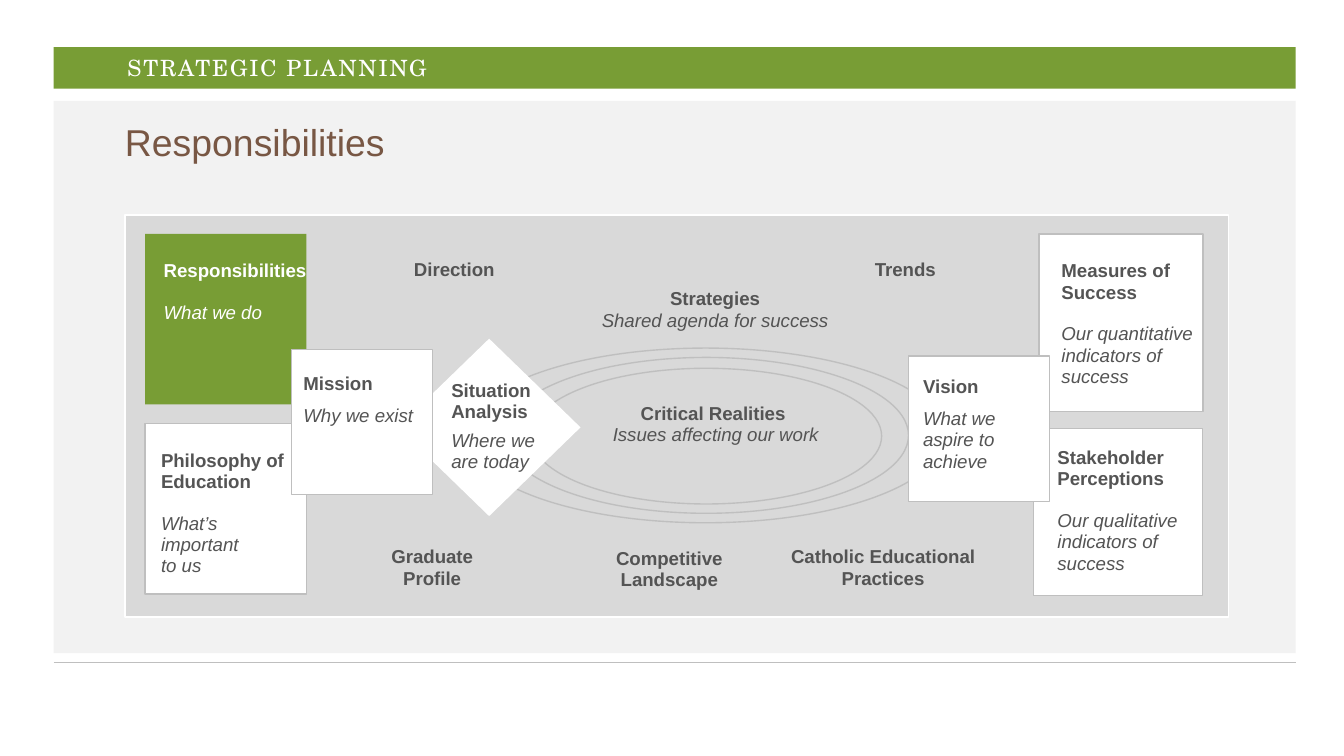
from pptx import Presentation
from pptx.dml.color import RGBColor as RGB
from pptx.enum.shapes import MSO_CONNECTOR as LINK, MSO_SHAPE as SHAPE
from pptx.enum.text import MSO_ANCHOR as ANCHOR, MSO_AUTO_SIZE as FIT, PP_ALIGN as ALIGN
from pptx.oxml.ns import qn
from pptx.util import Inches, Pt
from lxml import etree

theme = {
    "green": RGB.from_string("789D35"),
    "brown": RGB.from_string("785744"),
    "text": RGB.from_string("545454"),
    "white": RGB.from_string("FFFFFF"),
    "pale": RGB.from_string("F2F2F2"),
    "gray": RGB.from_string("D9D9D9"),
    "rule": RGB.from_string("BFBFBF"),
    "sans": "Arial",
    "serif": "TeX Gyre Schola",
    "title": Pt(20),
    "head": Pt(12),
    "body": Pt(10),
    "line": Pt(0.75),
}

deck = Presentation()
deck.slide_width = Inches(10)
deck.slide_height = Inches(10 * 9 / 16)
slide = deck.slides.add_slide(deck.slide_layouts[5])
shapes = slide.shapes


def draw(kind, box, fill=None, line=None):
    shape = shapes.add_shape(kind, *map(Inches, box))
    shape.shadow.inherit = False
    if fill:
        shape.fill.solid()
        shape.fill.fore_color.rgb = theme[fill]
    else:
        shape.fill.background()
    if line:
        shape.line.color.rgb = theme[line]
        shape.line.width = theme["line"]
    else:
        shape.line.fill.background()


def write(box, head, note=None, color="text", align=ALIGN.LEFT, gap=0, lead=0.95):
    frame = shapes.add_textbox(*map(Inches, box)).text_frame
    frame.word_wrap = True
    for i, words in enumerate([head, note] if note else [head]):
        para = frame.add_paragraph() if i else frame.paragraphs[0]
        para.text = words
        para.alignment = align
        para.line_spacing = 0.95 if i else lead
        if i:
            para.space_before = Pt(gap)
        font = para.font
        font.name, font.size = theme["sans"], theme["body"]
        font.bold, font.italic = i == 0, i == 1
        font.color.rgb = theme[color]


draw(SHAPE.RECTANGLE, (0.4, 0.75, 9.24, 4.11), "pale")
draw(SHAPE.RECTANGLE, (0.4, 0.35, 9.24, 0.31), "green")

rule = shapes.add_connector(LINK.STRAIGHT, Inches(0.4), Inches(4.93), Inches(9.64), Inches(4.93))
rule.line.color.rgb = theme["rule"]
rule.line.width = theme["line"]
etree.SubElement(rule._element.spPr, qn("a:effectLst"))

title = shapes.title
shapes._spTree.append(title._element)
band = shapes.add_textbox(Inches(0.85), Inches(0.31), Inches(3.89), Inches(0.41))
title.left, title.top, title.width, title.height = map(Inches, (0.83, 0.84, 3.94, 0.48))
for shape, words, face, size, color in [
    (title, "Responsibilities", "sans", "title", "brown"),
    (band, "STRATEGIC PLANNING", "serif", "head", "white"),
]:
    frame = shape.text_frame
    frame.text = words
    frame.word_wrap = True
    frame.auto_size = FIT.NONE
    frame.vertical_anchor = ANCHOR.MIDDLE
    para = frame.paragraphs[0]
    para.alignment = ALIGN.LEFT
    para.line_spacing = 0.85
    para.font.name, para.font.size = theme[face], theme[size]
    para.font.color.rgb = theme[color]
band.text_frame.paragraphs[0].runs[0].font._element.set("spc", "100")

draw(SHAPE.RECTANGLE, (0.93, 1.6, 8.21, 2.99), "gray", "white")
for box in [(7.73, 1.74, 1.22, 1.32), (7.69, 3.19, 1.26, 1.24)]:
    draw(SHAPE.RECTANGLE, box, "white", "rule")
for box in [(3.75, 2.66, 3.01, 1.16), (3.47, 2.59, 3.56, 1.3), (3.95, 2.74, 2.61, 1.01)]:
    draw(SHAPE.OVAL, box, line="rule")
draw(SHAPE.RECTANGLE, (6.76, 2.65, 1.05, 1.08), "white", "rule")
draw(SHAPE.DIAMOND, (2.96, 2.52, 1.36, 1.32), "white")
draw(SHAPE.RECTANGLE, (1.08, 1.74, 1.2, 1.27), "green")
draw(SHAPE.RECTANGLE, (1.08, 3.15, 1.2, 1.27), "white", "rule")
draw(SHAPE.RECTANGLE, (2.17, 2.6, 1.05, 1.08), "white", "rule")

for left, top, head, note, color in [
    (1.12, 1.89, "Responsibilities", "What we do", "white"),
    (1.1, 3.3, "Philosophy of Education", "What’s\vimportant\vto us", "text"),
    (7.8, 1.89, "Measures of Success", "Our quantitative indicators of success", "text"),
    (7.77, 3.28, "Stakeholder Perceptions", "Our qualitative indicators of success", "text"),
]:
    write((left, top, 1.27, 1.05), head, note, color, gap=11)

for box, head, note, gap, lead in [
    ((2.16, 2.72, 1.13, 0.86), "Mission", "Why we exist", 6, 1),
    ((3.26, 2.78, 0.96, 0.96), "Situation Analysis", "Where we\vare today", 4, 0.95),
    ((6.77, 2.74, 1.13, 0.86), "Vision", "What we aspire to achieve", 6, 1),
]:
    write(box, head, note, gap=gap, lead=lead)

for box, head, note in [
    ((4.07, 2.1, 2.5, 0.59), "Strategies", "Shared agenda for success"),
    ((4.06, 2.95, 2.53, 0.69), "Critical Realities ", "Issues affecting our work"),
    ((2.81, 1.88, 1.14, 0.26), "Direction", None),
    ((6.19, 1.88, 1.09, 0.26), "Trends", None),
    ((2.64, 4.02, 1.15, 0.42), "Graduate Profile", None),
    ((4.13, 4.03, 1.7, 0.42), "Competitive Landscape", None),
    ((5.75, 4.02, 1.64, 0.42), "Catholic Educational Practices", None),
]:
    write(box, head, note, align=ALIGN.CENTER)

deck.save("out.pptx")
